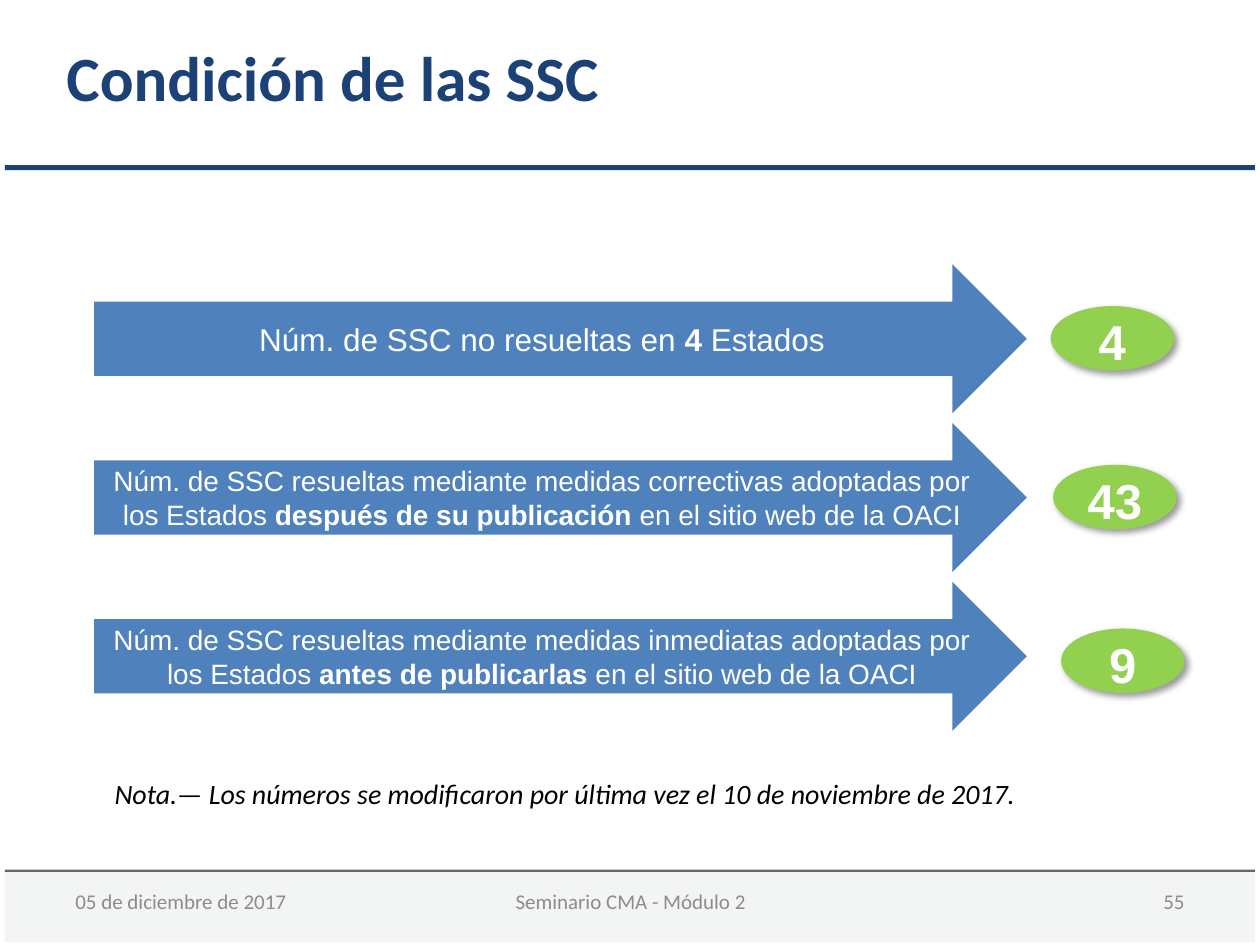
"""Build the slide on the status of the SSCs."""
from dataclasses import dataclass
from typing import NamedTuple

from lxml.etree import SubElement
from pptx import Presentation
from pptx.dml.color import RGBColor
from pptx.enum.shapes import MSO_SHAPE as Shape
from pptx.enum.text import MSO_ANCHOR as Anchor, MSO_AUTO_SIZE as AutoSize, PP_ALIGN as Align
from pptx.oxml.ns import qn
from pptx.util import Cm, Pt

COLORS = {
    "navy": "1B4177", "blue": "4F81BD", "green": "92D050", "white": "FFFFFF",
    "black": "000000", "band": "F3F4F4", "rule": "666666", "footer": "8C8C8C",
}
ARROW_LEFT, ARROW_TOP, ARROW_STEP = 1.9, 5.33, 3.2
ARROW_W, ARROW_H = 18.8, 3.0
OVAL_W, OVAL_H = 2.49, 1.3


class Box(NamedTuple):
    left: float
    top: float
    width: float
    height: float


class Run(NamedTuple):
    text: str
    bold: bool = False


@dataclass
class Style:
    size: float
    color: str
    font: str = "Calibri"
    italic: bool = False
    align: Align = Align.LEFT
    anchor: Anchor = Anchor.MIDDLE


@dataclass
class Row:
    runs: list[Run]
    size: float
    count: str
    oval_left: float
    oval_top: float


@dataclass
class Label:
    box: Box
    run: Run
    style: Style
    wrap: bool = True
    grow: bool = False


BARS = [
    (Box(0.1, 17.53, 25.2, 1.47), "band"),
    (Box(0.1, 17.53, 25.2, 0.05), "rule"),
    (Box(0.1, 3.33, 25.2, 0.1), "navy"),
]
ROWS = [
    Row([Run("Núm. de SSC no resueltas en "), Run("4 ", True), Run("Estados")],
        18, "4", 21.18, 6.17),
    Row([Run("Núm. de SSC resueltas mediante medidas correctivas adoptadas por los Estados "),
         Run("después de su publicación ", True), Run("en el sitio web de la OACI")],
        16, "43", 21.23, 9.37),
    Row([Run("Núm. de SSC resueltas mediante medidas inmediatas adoptadas por los Estados "),
         Run("antes de publicarlas ", True), Run("en el sitio web de la OACI")],
        16, "9", 21.39, 12.67),
]
LABELS = [
    Label(Box(1.09, 0.64, 19, 1.8), Run("Condición de las SSC", True),
          Style(36, "navy"), grow=True),
    Label(Box(2.06, 15.52, 19.2, 0.94),
          Run("Nota.— Los números se modificaron por última vez el 10 de noviembre de 2017."),
          Style(16, "black", italic=True, anchor=Anchor.TOP), wrap=False, grow=True),
    Label(Box(1.27, 17.65, 5.92, 1.02), Run("05 de diciembre de 2017"), Style(12, "footer")),
    Label(Box(8.69, 17.65, 8.05, 1.02), Run("Seminario CMA - Módulo 2"),
          Style(12, "footer", align=Align.CENTER)),
    Label(Box(18.21, 17.65, 5.92, 1.02), Run("55"), Style(12, "footer", align=Align.RIGHT)),
]


def rgb(name: str) -> RGBColor:
    """Return a named colour."""
    return RGBColor.from_string(COLORS[name])


def write(s, runs: list[Run], style: Style):
    """Fill a shape with one paragraph and return it."""
    tf = s.text_frame
    tf.word_wrap = True
    tf.vertical_anchor = style.anchor
    p = tf.paragraphs[0]
    p.alignment = style.align
    for run in runs:
        r = p.add_run()
        r.text = run.text
        r.font.name, r.font.size = style.font, Pt(style.size)
        r.font.bold, r.font.italic = run.bold, style.italic
        r.font.color.rgb = rgb(style.color)
    return p


def add_solid(sp, kind: Shape, box: Box, color: str):
    """Add a filled shape without outline or shadow."""
    s = sp.add_shape(kind, *map(Cm, box))
    s.shadow.inherit = False
    s.fill.solid()
    s.fill.fore_color.rgb = rgb(color)
    s.line.fill.background()
    return s


def add_shadow(s) -> None:
    """Give a shape a soft shadow to the lower right."""
    effects = s._element.spPr.find(qn("a:effectLst"))
    shadow = SubElement(effects, qn("a:outerShdw"), blurRad=str(Pt(4)), dist=str(Pt(3)),
                        dir=str(45 * 60000), algn="tl", rotWithShape="0")
    color = SubElement(shadow, qn("a:srgbClr"), val=COLORS["black"])
    SubElement(color, qn("a:alpha"), val="40000")


def add_row(sp, row: Row, top: float) -> None:
    """Add an arrow and the oval with its count."""
    arrow = add_solid(sp, Shape.RIGHT_ARROW, Box(ARROW_LEFT, top, ARROW_W, ARROW_H), "blue")
    write(arrow, row.runs, Style(row.size, "white", "Arial", align=Align.CENTER))
    oval = add_solid(sp, Shape.OVAL, Box(row.oval_left, row.oval_top, OVAL_W, OVAL_H), "green")
    add_shadow(oval)
    p = write(oval, [Run(row.count, True)], Style(28, "white", "Arial", align=Align.CENTER))
    p.line_spacing, p.space_after = 1.1, Pt(12)


def add_label(sp, label: Label) -> None:
    """Add a text box."""
    s = sp.add_textbox(*map(Cm, label.box))
    write(s, [label.run], label.style)
    s.text_frame.word_wrap = label.wrap
    if label.grow:
        s.text_frame.auto_size = AutoSize.SHAPE_TO_FIT_TEXT


def main() -> None:
    """Build and save the presentation."""
    prs = Presentation()
    prs.slide_width, prs.slide_height = Cm(25.4), Cm(19.05)
    sp = prs.slides.add_slide(prs.slide_layouts[6]).shapes
    for box, color in BARS:
        add_solid(sp, Shape.RECTANGLE, box, color)
    for i, row in enumerate(ROWS):
        add_row(sp, row, ARROW_TOP + i * ARROW_STEP)
    for label in LABELS:
        add_label(sp, label)
    prs.save("out.pptx")


if __name__ == "__main__":
    main()
